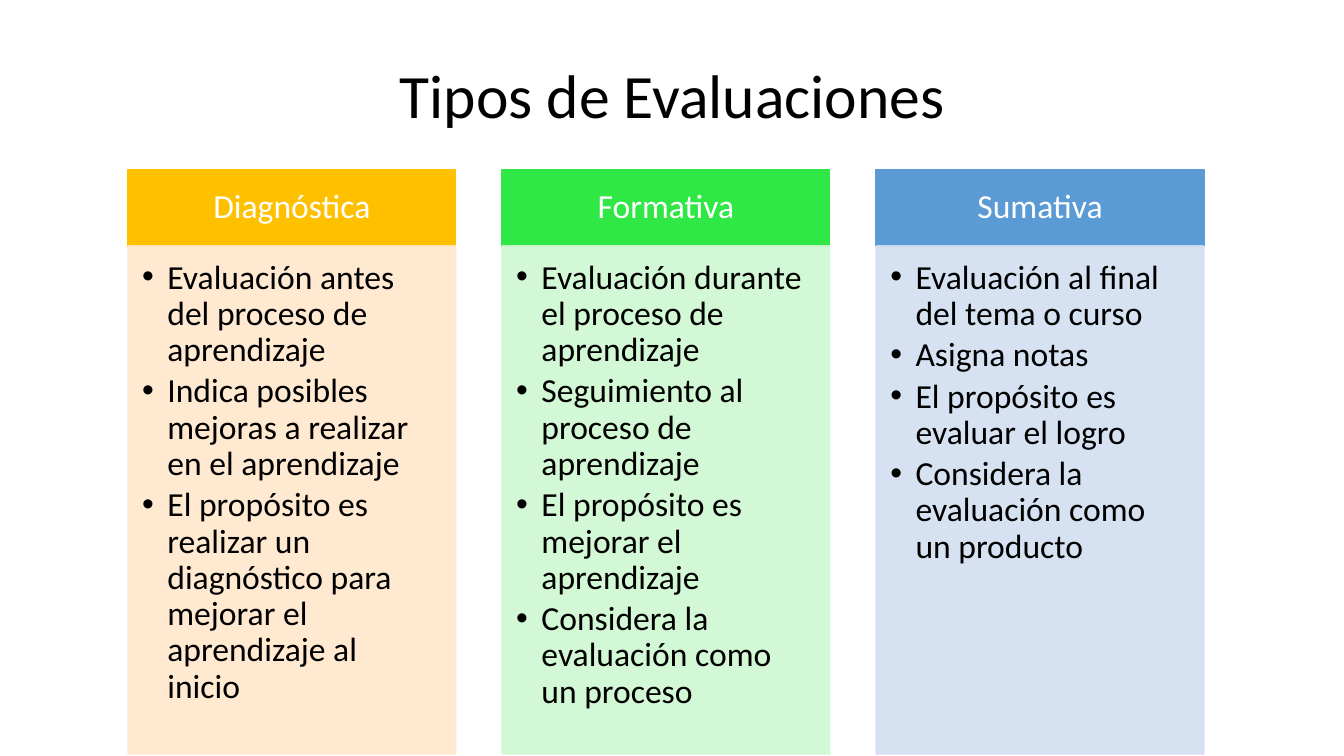
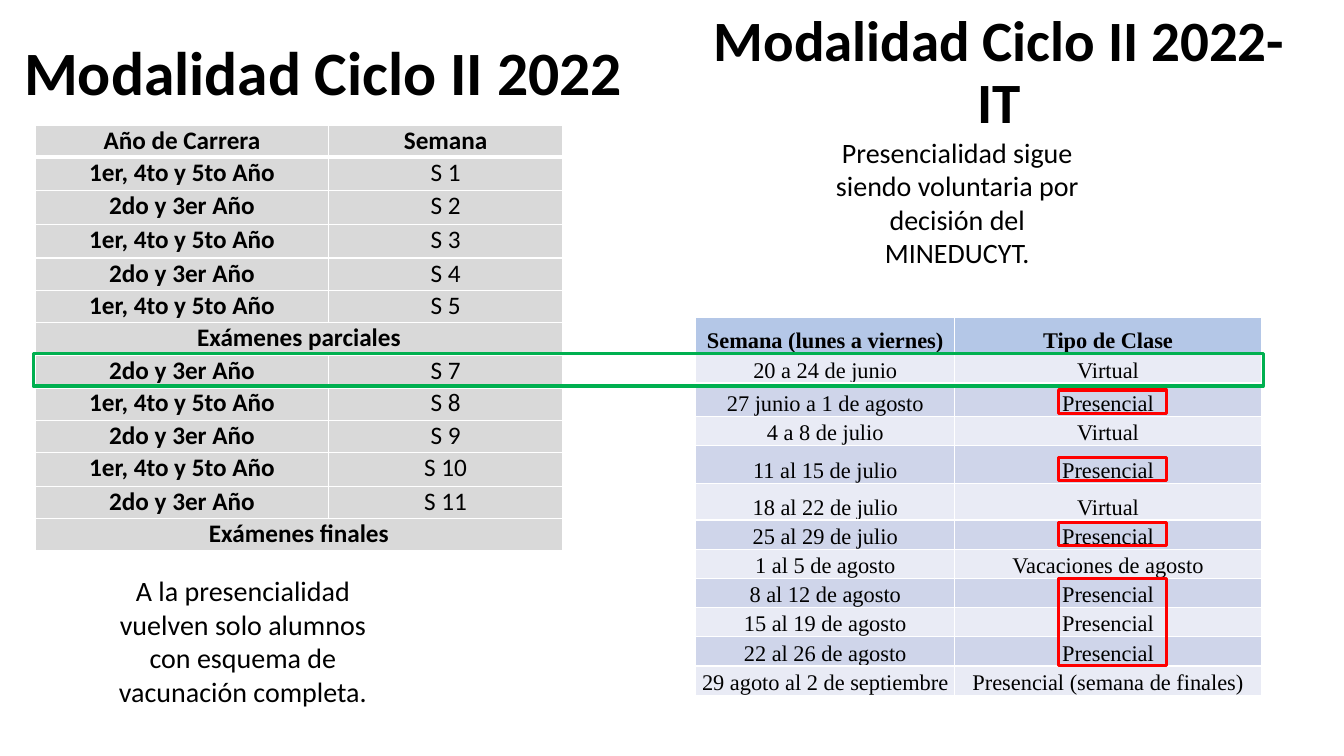
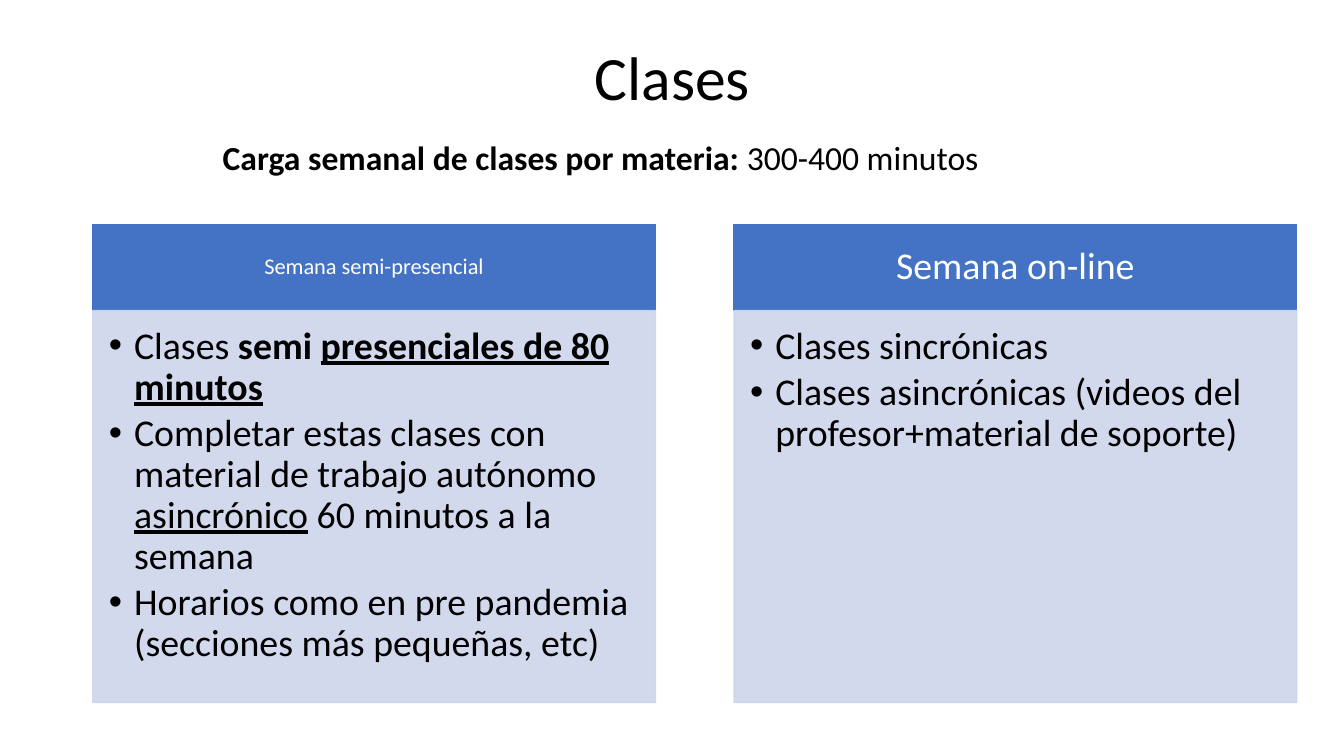
"""Build three slides on evaluations, class schedules and weekly lessons."""
from dataclasses import dataclass

from lxml import etree
from pptx import Presentation
from pptx.dml.color import RGBColor
from pptx.enum.shapes import MSO_SHAPE
from pptx.enum.text import MSO_ANCHOR, MSO_AUTO_SIZE, PP_ALIGN
from pptx.oxml.ns import qn
from pptx.util import Inches, Pt

RECTANGLE = MSO_SHAPE.RECTANGLE
TOP, MIDDLE, BOTTOM = MSO_ANCHOR.TOP, MSO_ANCHOR.MIDDLE, MSO_ANCHOR.BOTTOM
LEFT, CENTER = PP_ALIGN.LEFT, PP_ALIGN.CENTER
NO_AUTOSIZE = MSO_AUTO_SIZE.NONE
TITLE_ONLY = 5


@dataclass(frozen=True)
class Theme:
    """Fonts, type sizes and colours of the presentation."""

    font: str = "Calibri"
    serif: str = "Times New Roman"
    title_size: float = 44
    second_title_size: float = 40.7
    large_size: float = 27
    text_size: float = 24
    note_size: float = 20
    table_size: float = 18
    small_size: float = 16
    black: str = "000000"
    white: str = "FFFFFF"
    gold: str = "FFC000"
    pale_gold: str = "FFE8CC"
    green: str = "30E845"
    pale_green: str = "CFF8D1"
    sky: str = "5B9BD5"
    pale_sky: str = "D2DFF0"
    blue: str = "4472C4"
    pale_blue: str = "CFD5EA"
    lightest_blue: str = "E9EBF5"
    header_blue: str = "B4C7E7"
    gray: str = "D9D9D9"
    week_frame: str = "00B050"
    class_frame: str = "FF0000"


THEME = Theme()


@dataclass(frozen=True)
class TableStyle:
    """Look of one table."""

    font: str
    size: float
    header_fill: str
    row_fills: tuple
    anchor: MSO_ANCHOR
    side_margin: float
    header_rule: float = 1
    bold_labels: bool = False


class Deck:
    """Hold the style and the current slide, and draw each kind of element."""

    def __init__(self, theme):
        """Start a wide presentation."""
        self.theme = theme
        self.presentation = Presentation()
        self.presentation.slide_width = Inches(13.33)
        self.presentation.slide_height = Inches(7.5)
        self.slide = None

    def add_slide(self, title, box, bold=False):
        """Add a slide and format its title placeholder."""
        layout = self.presentation.slide_layouts[TITLE_ONLY]
        self.slide = self.presentation.slides.add_slide(layout)
        placeholder = self.slide.shapes.title
        placeholder.left, placeholder.top, placeholder.width, placeholder.height = map(Inches, box)
        self.format_title(placeholder, title, self.theme.title_size, bold)

    def format_title(self, shape, title, size, bold):
        """Put a centred title into a shape."""
        self.fill_text(shape.text_frame, [title], size, anchor=MIDDLE, bold=bold,
                       line_spacing=0.9)

    def add_second_title(self, title, box):
        """Add a bold title beside the main one."""
        shape = self.slide.shapes.add_textbox(*map(Inches, box))
        self.format_title(shape, title, self.theme.second_title_size, True)

    def add_note(self, text, box, size):
        """Add a centred text box."""
        shape = self.slide.shapes.add_textbox(*map(Inches, box))
        self.fill_text(shape.text_frame, [text], size)

    def add_rectangle(self, box, line, weight, fill=None, opacity=100):
        """Add a rectangle, unfilled unless a fill is given."""
        shape = self.slide.shapes.add_shape(RECTANGLE, *map(Inches, box))
        shape.shadow.inherit = False
        shape.line.width = Pt(weight)
        shape.line.color.rgb = RGBColor.from_string(line)
        if fill is None:
            shape.fill.background()
        else:
            shape.fill.solid()
            shape.fill.fore_color.rgb = RGBColor.from_string(fill)
        if opacity < 100:
            for color in shape.element.spPr.iter(qn("a:srgbClr")):
                etree.SubElement(color, qn("a:alpha"), val=str(opacity * 1000))
        return shape

    def add_card(self, box, header_height, header, items, colors, header_size, item_size,
                 item_margins):
        """Add a header band with a bulleted panel below it."""
        left, top, width, height = box
        strong, pale = colors
        band = self.add_rectangle((left, top, width, header_height), strong, 1, strong)
        self.fill_text(band.text_frame, [header], header_size, anchor=MIDDLE,
                       color=self.theme.white, line_spacing=0.9,
                       margins=(0.19, 0.11, 0.19, 0.11))
        panel_box = (left, top + header_height, width, height - header_height)
        panel = self.add_rectangle(panel_box, pale, 1, pale, opacity=90)
        self.fill_text(panel.text_frame, items, item_size, align=LEFT, line_spacing=0.9,
                       margins=item_margins, bulleted=True)

    def add_table(self, position, widths, heights, rows, style):
        """Add a table; a row with a single text spans all columns."""
        size = sum(widths), sum(heights)
        frame = self.slide.shapes.add_table(len(rows), len(widths), *map(Inches, position + size))
        table = frame.table
        table.first_row = table.horz_banding = False
        for column, width in zip(table.columns, widths):
            column.width = Inches(width)
        for index, (texts, height) in enumerate(zip(rows, heights)):
            table.rows[index].height = Inches(height)
            fill = style.row_fills[index % len(style.row_fills)] if index else style.header_fill
            top_rule = style.header_rule if index == 1 else 1
            bottom_rule = style.header_rule if index == 0 else 1
            for column in range(len(widths)):
                cell = table.cell(index, column)
                cell.fill.solid()
                cell.fill.fore_color.rgb = RGBColor.from_string(fill)
                self.set_borders(cell, top_rule, bottom_rule)
            if len(texts) == 1:
                table.cell(index, 0).merge(table.cell(index, len(widths) - 1))
            for column, text in enumerate(texts):
                cell = table.cell(index, column)
                cell.vertical_anchor = style.anchor
                cell.margin_left = cell.margin_right = Inches(style.side_margin)
                cell.margin_top = cell.margin_bottom = 0
                bold = index == 0 or (style.bold_labels and column == 0)
                self.format_paragraph(cell.text_frame.paragraphs[0], text, style.size,
                                      font_name=style.font, bold=bold)

    def set_borders(self, cell, top, bottom):
        """Draw white borders around a cell."""
        properties = cell._tc.get_or_add_tcPr()
        sides = (("L", 1), ("R", 1), ("T", top), ("B", bottom))
        for index, (side, weight) in enumerate(sides):
            line = etree.Element(qn(f"a:ln{side}"), w=str(Pt(weight)))
            fill = etree.SubElement(line, qn("a:solidFill"))
            etree.SubElement(fill, qn("a:srgbClr"), val=self.theme.white)
            properties.insert(index, line)

    def fill_text(self, frame, items, size, anchor=TOP, margins=(0.1, 0.05, 0.1, 0.05), **style):
        """Fill a text frame with one paragraph for each item."""
        frame.word_wrap = True
        frame.auto_size = NO_AUTOSIZE
        frame.vertical_anchor = anchor
        (frame.margin_left, frame.margin_top,
         frame.margin_right, frame.margin_bottom) = map(Inches, margins)
        for index, item in enumerate(items):
            paragraph = frame.add_paragraph() if index else frame.paragraphs[0]
            self.format_paragraph(paragraph, item, size, **style)

    def format_paragraph(self, paragraph, item, size, align=CENTER, bold=False, color=None,
                         font_name=None, line_spacing=None, bulleted=False):
        """Set a text, or (text, marks) runs where b is bold and u underlined."""
        paragraph.alignment = align
        if line_spacing:
            paragraph.line_spacing = line_spacing
        if bulleted:
            paragraph.space_after = Pt(round(size * 0.15, 1))
            properties = paragraph._p.get_or_add_pPr()
            properties.set("marL", str(Inches(0.25)))
            properties.set("indent", str(Inches(-0.25)))
            etree.SubElement(properties, qn("a:buFont"), typeface="Arial")
            etree.SubElement(properties, qn("a:buChar"), char="•")
        font = paragraph.font
        font.name = font_name or self.theme.font
        font.size = Pt(size)
        font.color.rgb = RGBColor.from_string(color or self.theme.black)
        font.bold = bold
        for text, marks in [(item, "")] if isinstance(item, str) else item:
            run = paragraph.add_run()
            run.text = text
            if "b" in marks:
                run.font.bold = True
            if "u" in marks:
                run.font.underline = True


def build_evaluations(deck):
    """Compare the three types of evaluation."""
    theme = deck.theme
    deck.add_slide("Tipos de Evaluaciones", (0.92, 0.4, 11.5, 1.15))
    evaluations = [
        ("Diagnóstica", (theme.gold, theme.pale_gold), [
            "Evaluación antes del proceso de aprendizaje",
            "Indica posibles mejoras a realizar en el aprendizaje",
            "El propósito es realizar un diagnóstico para mejorar el aprendizaje al inicio"]),
        ("Formativa", (theme.green, theme.pale_green), [
            "Evaluación durante el proceso de aprendizaje",
            "Seguimiento al proceso de aprendizaje",
            "El propósito es mejorar el aprendizaje",
            "Considera la evaluación como un proceso"]),
        ("Sumativa", (theme.sky, theme.pale_sky), [
            "Evaluación al final del tema o curso",
            "Asigna notas",
            "El propósito es evaluar el logro",
            "Considera la evaluación como un producto"]),
    ]
    for index, (name, colors, items) in enumerate(evaluations):
        deck.add_card((1.27 + 3.71 * index, 1.68, 3.25, 5.8), 0.76, name, items, colors,
                      theme.text_size, theme.text_size, (0.14, 0.14, 0.19, 0.21))


def build_schedules(deck):
    """Set the two class schedules side by side."""
    theme = deck.theme
    deck.add_slide("Modalidad Ciclo II 2022", (0.13, 0.34, 6.16, 0.81), bold=True)
    deck.add_second_title("Modalidad Ciclo II 2022-IT", (6.83, 0.33, 6.16, 0.81))
    deck.add_note("A la presencialidad vuelven solo alumnos con esquema de vacunación completa.",
                  (0.93, 5.64, 2.96, 1.45), theme.note_size)
    deck.add_note("Presencialidad sigue siendo voluntaria por decisión del MINEDUCYT.",
                  (8.11, 1.29, 2.77, 1.45), theme.note_size)

    odd_years, even_years = "1er, 4to y 5to Año", "2do y 3er Año"
    career_rows = [("Año de Carrera", "Semana")]
    for week in range(1, 12):
        if week == 6:
            career_rows.append(("Exámenes parciales",))
        else:
            first_group = week % 2 == (1 if week < 6 else 0)
            career_rows.append((odd_years if first_group else even_years, f"S {week}"))
    career_rows.append(("Exámenes finales",))
    deck.add_table(
        (0.35, 1.24), (2.91, 2.32),
        (0.32, 0.33, 0.34, 0.33, 0.32, 0.32, 0.33, 0.32, 0.32, 0.32, 0.34, 0.32, 0.32),
        career_rows,
        TableStyle(theme.font, theme.table_size, theme.gray, (theme.gray,), TOP, 0.07,
                   header_rule=3, bold_labels=True))

    virtual, on_site = "Virtual", "Presencial"
    calendar_rows = [
        ("Semana (lunes a viernes)", "Tipo de Clase"),
        ("20 a 24 de junio", virtual),
        ("27 junio a 1 de agosto", on_site),
        ("4 a 8 de julio", virtual),
        ("11 al 15 de julio", on_site),
        ("18 al 22 de julio", virtual),
        ("25 al 29 de julio", on_site),
        ("1 al 5 de agosto", "Vacaciones de agosto"),
        ("8 al 12 de agosto", on_site),
        ("15 al 19 de agosto", on_site),
        ("22 al 26 de agosto", on_site),
        ("29 agoto al 2 de septiembre", "Presencial (semana de finales)"),
    ]
    deck.add_table(
        (6.9, 3.15), (2.57, 3.04),
        (0.36, 0.29, 0.33, 0.29, 0.38, 0.36) + (0.29,) * 6,
        calendar_rows,
        TableStyle(theme.serif, theme.small_size, theme.header_blue,
                   (theme.pale_blue, theme.lightest_blue), BOTTOM, 0.05))

    deck.add_rectangle((0.33, 3.51, 12.2, 0.32), theme.week_frame, 2.25)
    for top, height in ((3.87, 0.23), (4.54, 0.23), (5.18, 0.23), (5.74, 0.86)):
        deck.add_rectangle((10.5, top, 1.07, height), theme.class_frame, 2.25)


def build_classes(deck):
    """Compare the two kinds of school week."""
    theme = deck.theme
    deck.add_slide("Clases", (0.92, 0.4, 11.5, 0.8))
    weeks = [
        ("Semana semi-presencial", theme.small_size, [
            [("Clases ", ""), ("semi ", "b"), ("presenciales de 80 minutos", "bu")],
            [("Completar estas clases con material de trabajo autónomo ", ""),
             ("asincrónico", "u"), (" 60 minutos a la semana", "")],
            "Horarios como en pre pandemia (secciones más pequeñas, etc)"]),
        ("Semana on-line", theme.large_size, [
            "Clases sincrónicas",
            "Clases asincrónicas (videos del profesor+material de soporte)"]),
    ]
    for index, (name, header_size, items) in enumerate(weeks):
        deck.add_card((0.92 + 6.36 * index, 2.23, 5.58, 4.74), 0.85, name, items,
                      (theme.blue, theme.pale_blue), header_size, theme.large_size,
                      (0.16, 0.16, 0.21, 0.24))
    deck.add_note([("Carga semanal de clases por materia: ", "b"), ("300-400 minutos ", "")],
                  (0.11, 1.31, 11.77, 0.5), theme.text_size)


def main():
    """Build and save the presentation."""
    deck = Deck(THEME)
    build_evaluations(deck)
    build_schedules(deck)
    build_classes(deck)
    deck.presentation.save("out.pptx")


if __name__ == "__main__":
    main()
